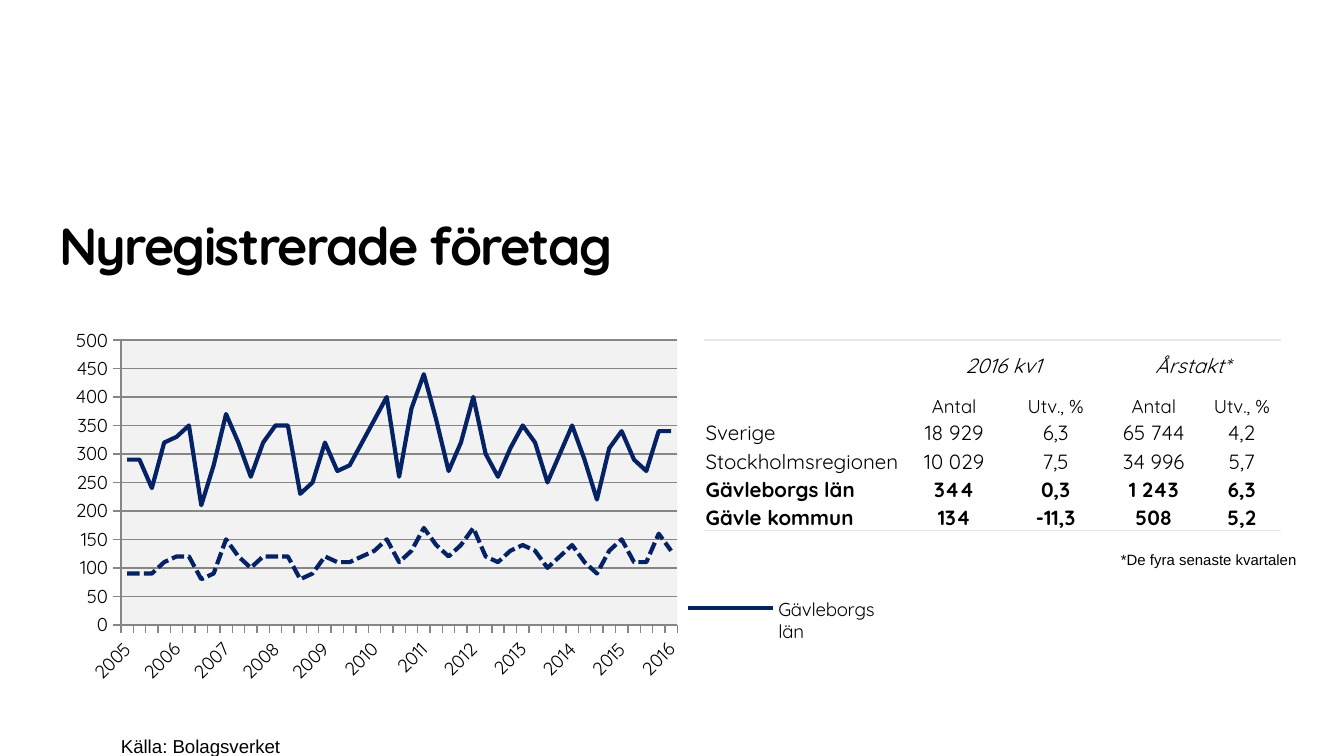
"""Build a slide on newly registered companies with a line chart and a table."""
import dataclasses

import lxml.etree
import pptx
import pptx.chart.data
import pptx.dml.color
import pptx.enum.chart
import pptx.enum.dml
import pptx.enum.text
import pptx.oxml
import pptx.oxml.ns
import pptx.util

Inches = pptx.util.Inches
Pt = pptx.util.Pt
ALIGN = pptx.enum.text.PP_ALIGN
ANCHOR = pptx.enum.text.MSO_ANCHOR
qn = pptx.oxml.ns.qn

HEADING_FONT = "Quicksand"
NOTE_FONT = "Arial"
BLACK, NAVY, GRID, RULE, PANEL = "000000", "052364", "868686", "E6E6E6", "F2F2F2"
PLAIN_TABLE_STYLE = "{2D5ABB26-0587-4C30-8999-92F81FD0307C}"


@dataclasses.dataclass(frozen=True)
class Box:
    left: float
    top: float
    width: float
    height: float


@dataclasses.dataclass(frozen=True)
class Note:
    wording: str
    box: Box
    size: float


@dataclasses.dataclass(frozen=True)
class Region:
    name: str
    values: tuple
    dash: object = None


@dataclasses.dataclass(frozen=True)
class Row:
    texts: tuple
    height: float = 0.21
    size: float = 11
    bold: bool = False
    italic: bool = False


CHART_BOX = Box(0.43, 2.39, 6.3, 2.76)
PLOT_BOX = Box(0.9, 2.53, 4.14, 2.12)
LEGEND_BOX = Box(5.04, 4.42, 1.55, 0.4)
COLUMN_WIDTHS = (1.47, 0.78, 0.73, 0.73, 0.58)

NOTES = (
    Note("Källa: Bolagsverket", Box(0.9, 5.3, 1.4, 0.42), 10),
    Note("*De fyra senaste kvartalen", Box(8.34, 3.9, 1.4, 1), 8),
)
REGIONS = (
    Region("Gävleborgs län", (
        290, 290, 240, 320, 330, 350, 210, 280, 370, 320, 260, 320, 350, 350, 230,
        250, 320, 270, 280, 320, 360, 400, 260, 380, 440, 360, 270, 320, 400, 300,
        260, 310, 350, 320, 250, 300, 350, 290, 220, 310, 340, 290, 270, 340, 340)),
    Region("Gävle kommun", (
        90, 90, 90, 110, 120, 120, 80, 90, 150, 120, 100, 120, 120, 120, 80,
        90, 120, 110, 110, 120, 130, 150, 110, 130, 170, 140, 120, 140, 170, 120,
        110, 130, 140, 130, 100, 120, 140, 110, 90, 130, 150, 110, 110, 160, 130),
        pptx.enum.dml.MSO_LINE.SQUARE_DOT),
)
ROWS = (
    Row(("", "2016 kv1", "", "Årstakt*", ""), height=0.29, italic=True),
    Row(("", "Antal", "Utv., %", "Antal", "Utv., %"), height=0.29, size=10),
    Row(("Sverige", "18 929", "6,3", "65 744", "4,2")),
    Row(("Stockholmsregionen", "10 029", "7,5", "34 996", "5,7")),
    Row(("Gävleborgs län", "344", "0,3", "1 243", "6,3"), bold=True),
    Row(("Gävle kommun", "134", "-11,3", "508", "5,2"), bold=True),
)


def rgb(value: str) -> pptx.dml.color.RGBColor:
    return pptx.dml.color.RGBColor.from_string(value)


def inches(box: Box) -> tuple:
    return tuple(Inches(length) for length in dataclasses.astuple(box))


def set_font(font, name: str, size: float, bold=False, italic=False) -> None:
    font.name, font.size, font.bold, font.italic = name, Pt(size), bold, italic
    font.color.rgb = rgb(BLACK)


def clear_margins(frame) -> None:
    frame.margin_left = frame.margin_right = frame.margin_top = frame.margin_bottom = 0


def add_title(slide, wording: str) -> None:
    title = slide.shapes.title
    title.left, title.top, title.width, title.height = inches(Box(0.44, 1.59, 6.21, 0.8))
    frame = title.text_frame
    clear_margins(frame)
    frame.auto_size = pptx.enum.text.MSO_AUTO_SIZE.NONE
    frame.vertical_anchor = ANCHOR.TOP
    frame.text = wording
    heading = frame.paragraphs[0]
    heading.alignment = ALIGN.LEFT
    set_font(heading.font, HEADING_FONT, 28, bold=True)
    heading.runs[0]._r.get_or_add_rPr().set("spc", "-90")


def add_note(slide, note: Note) -> None:
    frame = slide.shapes.add_textbox(*inches(note.box)).text_frame
    clear_margins(frame)
    frame.word_wrap = False
    frame.text = note.wording
    line = frame.paragraphs[0]
    line.line_spacing = Pt(24)
    set_font(line.font, NOTE_FONT, note.size)


def add_rule(cell, side: str) -> None:
    rule = pptx.oxml.parse_xml(
        f'<a:{side} {pptx.oxml.ns.nsdecls("a")} w="12700">'
        f'<a:solidFill><a:srgbClr val="{RULE}"/></a:solidFill></a:{side}>')
    cell._tc.get_or_add_tcPr().insert(0, rule)


def add_figures(slide) -> None:
    box = Box(5.24, 2.53, sum(COLUMN_WIDTHS), sum(row.height for row in ROWS))
    table = slide.shapes.add_table(len(ROWS), len(COLUMN_WIDTHS), *inches(box)).table
    table.first_row = table.horz_banding = False
    table._tbl.tblPr.find(qn("a:tableStyleId")).text = PLAIN_TABLE_STYLE
    for column, width in zip(table.columns, COLUMN_WIDTHS):
        column.width = Inches(width)
    for r, row in enumerate(ROWS):
        table.rows[r].height = Inches(row.height)
        for c, wording in enumerate(row.texts):
            cell = table.cell(r, c)
            cell.fill.background()
            cell.margin_left = cell.margin_right = cell.margin_top = Inches(0.01)
            cell.margin_bottom = 0
            cell.vertical_anchor = ANCHOR.BOTTOM
            cell.text = wording
            entry = cell.text_frame.paragraphs[0]
            entry.alignment = ALIGN.CENTER if c else ALIGN.LEFT
            set_font(entry.font, HEADING_FONT, row.size, row.bold, row.italic)
            if r == 0:
                add_rule(cell, "lnT")
            elif r == len(ROWS) - 1:
                add_rule(cell, "lnB")
    for c in (1, 3):
        table.cell(0, c).merge(table.cell(0, c + 1))


def chart_layout(box: Box, inner: bool):
    layout = lxml.etree.Element(qn("c:layout"))
    manual = lxml.etree.SubElement(layout, qn("c:manualLayout"))
    settings = [("layoutTarget", "inner")] if inner else []
    settings += [("xMode", "edge"), ("yMode", "edge"),
                 ("x", (box.left - CHART_BOX.left) / CHART_BOX.width),
                 ("y", (box.top - CHART_BOX.top) / CHART_BOX.height),
                 ("w", box.width / CHART_BOX.width), ("h", box.height / CHART_BOX.height)]
    for tag, value in settings:
        lxml.etree.SubElement(manual, qn(f"c:{tag}")).set("val", str(value))
    return layout


def style_axis(axis) -> None:
    axis.major_tick_mark = pptx.enum.chart.XL_TICK_MARK.OUTSIDE
    axis.format.line.color.rgb = rgb(GRID)
    axis.format.line.width = Pt(0.75)


def add_trend(slide) -> None:
    data = pptx.chart.data.CategoryChartData(number_format="#,##0")
    data.categories = ["" if quarter % 4 else str(2005 + quarter // 4)
                       for quarter in range(len(REGIONS[0].values))]
    for region in REGIONS:
        data.add_series(region.name, region.values)
    chart = slide.shapes.add_chart(
        pptx.enum.chart.XL_CHART_TYPE.LINE, *inches(CHART_BOX), data).chart
    chart.has_title = False
    set_font(chart.font, HEADING_FONT, 10)
    chart.plots[0].vary_by_categories = False
    for series, region in zip(chart.plots[0].series, REGIONS):
        series.smooth = False
        series.marker.style = pptx.enum.chart.XL_MARKER_STYLE.NONE
        series.format.line.color.rgb = rgb(NAVY)
        series.format.line.width = Pt(2.25)
        if region.dash:
            series.format.line.dash_style = region.dash

    years, counts = chart.category_axis, chart.value_axis
    style_axis(years)
    style_axis(counts)
    years.tick_labels.font.size = Pt(10)
    years._element.find(qn("c:txPr")).find(qn("a:bodyPr")).set("rot", "-2700000")
    label_step = lxml.etree.Element(qn("c:tickLblSkip"))
    label_step.set("val", "1")
    years._element.find(qn("c:noMultiLvlLbl")).addprevious(label_step)
    counts.minimum_scale, counts.maximum_scale, counts.major_unit = 0, 500, 50
    counts.major_gridlines.format.line.color.rgb = rgb(GRID)
    counts.major_gridlines.format.line.width = Pt(0.75)

    plot_area = chart._chartSpace.chart.plotArea
    for layout in plot_area.findall(qn("c:layout")):
        plot_area.remove(layout)
    plot_area.insert(0, chart_layout(PLOT_BOX, inner=True))
    plot_area.append(pptx.oxml.parse_xml(
        f'<c:spPr {pptx.oxml.ns.nsdecls("c", "a")}><a:solidFill>'
        f'<a:srgbClr val="{PANEL}"/></a:solidFill></c:spPr>'))

    chart.has_legend = True
    chart.legend.position = pptx.enum.chart.XL_LEGEND_POSITION.RIGHT
    chart.legend.include_in_layout = False
    legend = chart.legend._element
    for layout in legend.findall(qn("c:layout")):
        legend.remove(layout)
    legend_position = legend.find(qn("c:legendPos"))
    legend_position.addnext(chart_layout(LEGEND_BOX, inner=False))
    legend_position.addnext(pptx.oxml.parse_xml(
        f'<c:legendEntry {pptx.oxml.ns.nsdecls("c")}><c:idx val="1"/>'
        '<c:delete val="1"/></c:legendEntry>'))


def main() -> None:
    deck = pptx.Presentation()
    deck.slide_width = Inches(10)
    deck.slide_height = deck.slide_width * 9 // 16
    slide = deck.slides.add_slide(deck.slide_layouts[5])
    add_title(slide, "Nyregistrerade företag")
    add_figures(slide)
    for note in NOTES:
        add_note(slide, note)
    add_trend(slide)
    deck.save("out.pptx")


if __name__ == "__main__":
    main()
